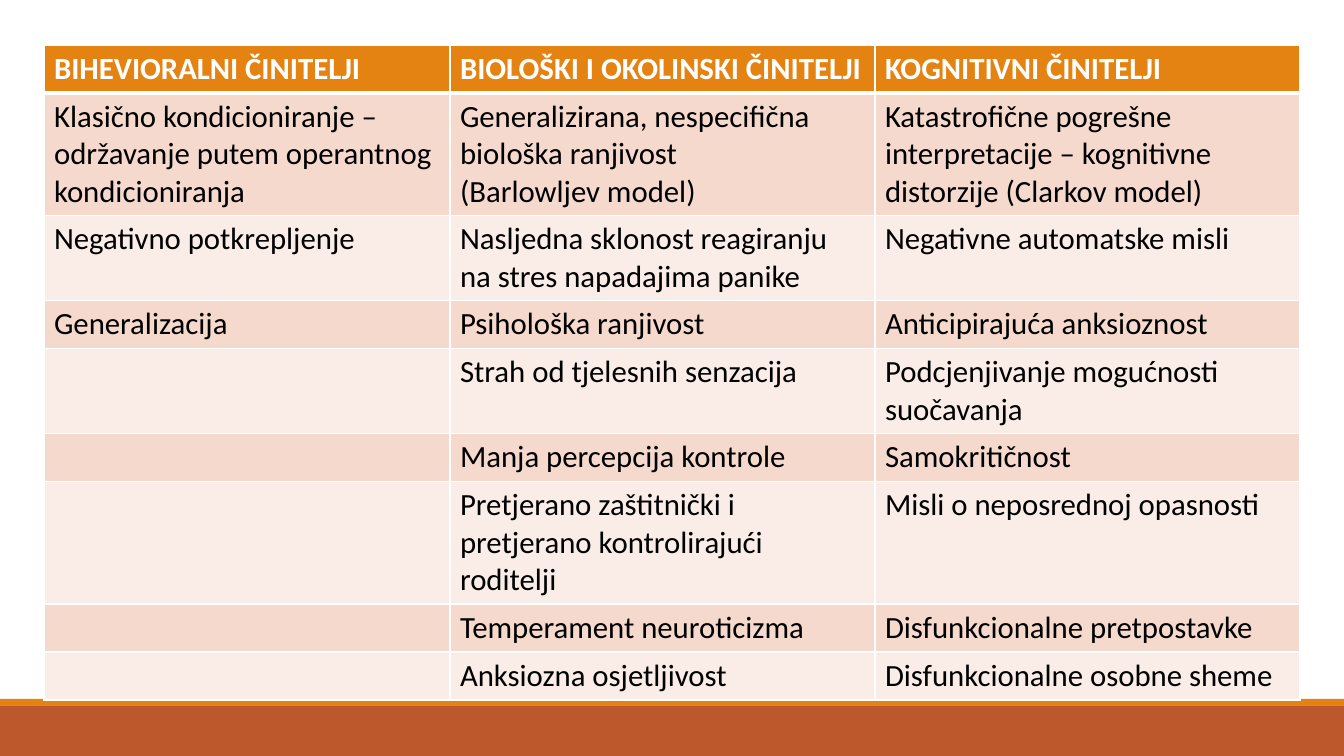
from dataclasses import dataclass

from lxml import etree
from pptx import Presentation
from pptx.dml.color import RGBColor
from pptx.enum.shapes import MSO_SHAPE
from pptx.oxml.ns import qn
from pptx.util import Pt

RECTANGLE = MSO_SHAPE.RECTANGLE
EMU_PER_PX = 914400 / 100.8
EMU_PER_POINT = 12700


@dataclass(frozen=True)
class Theme:
    font: str = "Calibri"
    text_size: int = 22
    orange: str = "E48312"
    rust: str = "BD582C"
    dark_band: str = "F5D9CC"
    light_band: str = "FAEDE7"
    white: str = "FFFFFF"
    black: str = "000000"
    border: int = 1
    header_border: int = 3


THEME = Theme()

SLIDE_WIDTH, SLIDE_HEIGHT = 1344, 756
TABLE_LEFT, TABLE_TOP = 44, 45
COLUMN_WIDTHS = [406, 425, 425]
LINE_HEIGHT, ROW_PADDING = 37, 11
ROW_LINES = [1, 3, 2, 1, 2, 1, 3, 1, 1]

FACTORS = [
    ["BIHEVIORALNI ČINITELJI", "BIOLOŠKI I OKOLINSKI ČINITELJI", "KOGNITIVNI ČINITELJI"],
    [
        "Klasično kondicioniranje – održavanje putem operantnog kondicioniranja",
        "Generalizirana, nespecifična biološka ranjivost\n(Barlowljev model)",
        "Katastrofične pogrešne interpretacije – kognitivne distorzije (Clarkov model)",
    ],
    [
        "Negativno potkrepljenje",
        "Nasljedna sklonost reagiranju na stres napadajima panike",
        "Negativne automatske misli",
    ],
    ["Generalizacija", "Psihološka ranjivost", "Anticipirajuća anksioznost"],
    ["", "Strah od tjelesnih senzacija", "Podcjenjivanje mogućnosti suočavanja"],
    ["", "Manja percepcija kontrole", "Samokritičnost"],
    [
        "",
        "Pretjerano zaštitnički i pretjerano kontrolirajući roditelji",
        "Misli o neposrednoj opasnosti",
    ],
    ["", "Temperament neuroticizma", "Disfunkcionalne pretpostavke"],
    ["", "Anksiozna osjetljivost", "Disfunkcionalne osobne sheme"],
]


def px(length):
    return round(length * EMU_PER_PX)


def paint(fill, color):
    fill.solid()
    fill.fore_color.rgb = RGBColor.from_string(color)


def write_text(text_frame, text, *, color, bold=False, size=THEME.text_size):
    text_frame.text = text
    for paragraph in text_frame.paragraphs:
        for run in paragraph.runs:
            run.font.name = THEME.font
            run.font.size = Pt(size)
            run.font.bold = bold
            run.font.color.rgb = RGBColor.from_string(color)


def add_band(slide, top, height, color):
    shape = slide.shapes.add_shape(RECTANGLE, 0, px(top), px(SLIDE_WIDTH), px(height))
    shape.shadow.inherit = False
    paint(shape.fill, color)
    shape.line.fill.background()


def set_borders(cell, top, bottom):
    properties = cell._tc.get_or_add_tcPr()
    widths = {"a:lnL": THEME.border, "a:lnR": THEME.border, "a:lnT": top, "a:lnB": bottom}
    for position, (tag, width) in enumerate(widths.items()):
        line = etree.Element(qn(tag), w=str(width * EMU_PER_POINT))
        solid = etree.SubElement(line, qn("a:solidFill"))
        etree.SubElement(solid, qn("a:srgbClr"), val=THEME.white)
        properties.insert(position, line)


def format_cell(cell, text, row_index):
    header = row_index == 0
    band = THEME.dark_band if row_index % 2 else THEME.light_band
    paint(cell.fill, THEME.orange if header else band)
    set_borders(
        cell,
        top=THEME.header_border if row_index == 1 else THEME.border,
        bottom=THEME.header_border if header else THEME.border,
    )
    if text:
        write_text(cell.text_frame, text, color=THEME.white if header else THEME.black, bold=header)


def add_factor_table(slide):
    row_heights = [lines * LINE_HEIGHT + ROW_PADDING for lines in ROW_LINES]
    table = slide.shapes.add_table(
        len(FACTORS), len(COLUMN_WIDTHS), px(TABLE_LEFT), px(TABLE_TOP),
        px(sum(COLUMN_WIDTHS)), px(sum(row_heights)),
    ).table
    for column, width in zip(table.columns, COLUMN_WIDTHS):
        column.width = px(width)
    for row_index, (row, height, texts) in enumerate(zip(table.rows, row_heights, FACTORS)):
        row.height = px(height)
        for cell, text in zip(row.cells, texts):
            format_cell(cell, text, row_index)


def main():
    presentation = Presentation()
    presentation.slide_width = px(SLIDE_WIDTH)
    presentation.slide_height = px(SLIDE_HEIGHT)
    slide = presentation.slides.add_slide(presentation.slide_layouts[6])
    paint(slide.background.fill, THEME.white)
    add_band(slide, 706, 50, THEME.rust)
    add_band(slide, 699, 7, THEME.orange)
    add_factor_table(slide)
    presentation.save("out.pptx")


if __name__ == "__main__":
    main()
